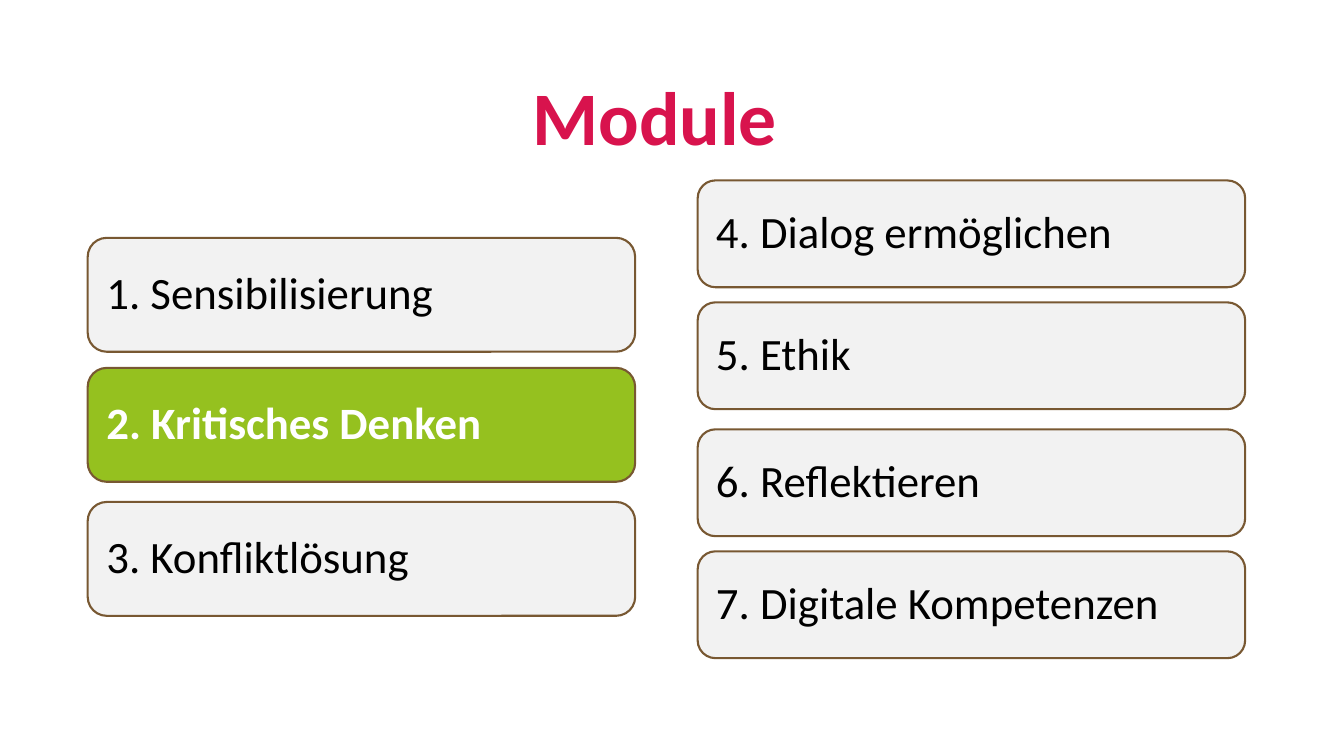
from dataclasses import dataclass

from pptx import Presentation
from pptx.dml.color import RGBColor
from pptx.enum import shapes, text
from pptx.slide import Slide
from pptx.text.text import TextFrame
from pptx.util import Inches, Pt

COLORS = {
    "title": "D8134D",
    "card": "F2F2F2",
    "active": "95C11F",
    "outline": "785832",
    "text": "000000",
    "active_text": "FFFFFF",
}
CARD_WIDTH = 5.43
ACTIVE_MODULE = "2. Kritisches Denken"


@dataclass(frozen=True)
class Column:
    left: float
    card_height: float
    cards: dict[str, float]  # module name -> top


COLUMNS = [
    Column(0.87, 1.13, {
        "1. Sensibilisierung": 2.36,
        ACTIVE_MODULE: 3.65,
        "3. Konfliktlösung": 4.98,
    }),
    Column(6.92, 1.06, {
        "4. Dialog ermöglichen": 1.79,
        "5. Ethik": 3.0,
        "6. Reflektieren": 4.26,
        "7. Digitale Kompetenzen": 5.47,
    }),
]


def color(name: str) -> RGBColor:
    return RGBColor.from_string(COLORS[name])


def write(frame: TextFrame, wording: str, size: int, color_name: str, bold: bool,
          align: text.PP_ALIGN, anchor: text.MSO_ANCHOR, inset: float) -> None:
    frame_format = {"word_wrap": True, "vertical_anchor": anchor}
    for side in ("left", "top", "right", "bottom"):
        frame_format[f"margin_{side}"] = Inches(inset)
    for name, value in frame_format.items():
        setattr(frame, name, value)

    para = frame.paragraphs[0]
    para.alignment = align
    para.line_spacing = 0.9
    span = para.add_run()
    span.text = wording
    span_format = {"name": "Calibri", "size": Pt(size), "bold": bold}
    for name, value in span_format.items():
        setattr(span.font, name, value)
    span.font.color.rgb = color(color_name)


def add_title(page: Slide, wording: str) -> None:
    box = page.shapes.add_textbox(Inches(0.01), Inches(-0.3), Inches(12.97), Inches(1.95))
    write(box.text_frame, wording, 54, "title", True,
          text.PP_ALIGN.CENTER, text.MSO_ANCHOR.BOTTOM, 0.05)


def add_card(page: Slide, column: Column, module: str, top: float) -> None:
    active = module == ACTIVE_MODULE
    card = page.shapes.add_shape(
        shapes.MSO_SHAPE.ROUNDED_RECTANGLE, Inches(column.left), Inches(top),
        Inches(CARD_WIDTH), Inches(column.card_height))
    card.shadow.inherit = False
    card.fill.solid()
    card.fill.fore_color.rgb = color("active" if active else "card")
    card.line.color.rgb = color("outline")
    card.line.width = Pt(1.5)
    write(card.text_frame, module, 32, "active_text" if active else "text", active,
          text.PP_ALIGN.LEFT, text.MSO_ANCHOR.MIDDLE, 0.13)


def main() -> None:
    deck = Presentation()
    deck.slide_width, deck.slide_height = Inches(13.33), Inches(7.5)
    page = deck.slides.add_slide(deck.slide_layouts[6])
    add_title(page, "Module")
    for column in COLUMNS:
        for module, top in column.cards.items():
            add_card(page, column, module, top)
    deck.save("out.pptx")


if __name__ == "__main__":
    main()
